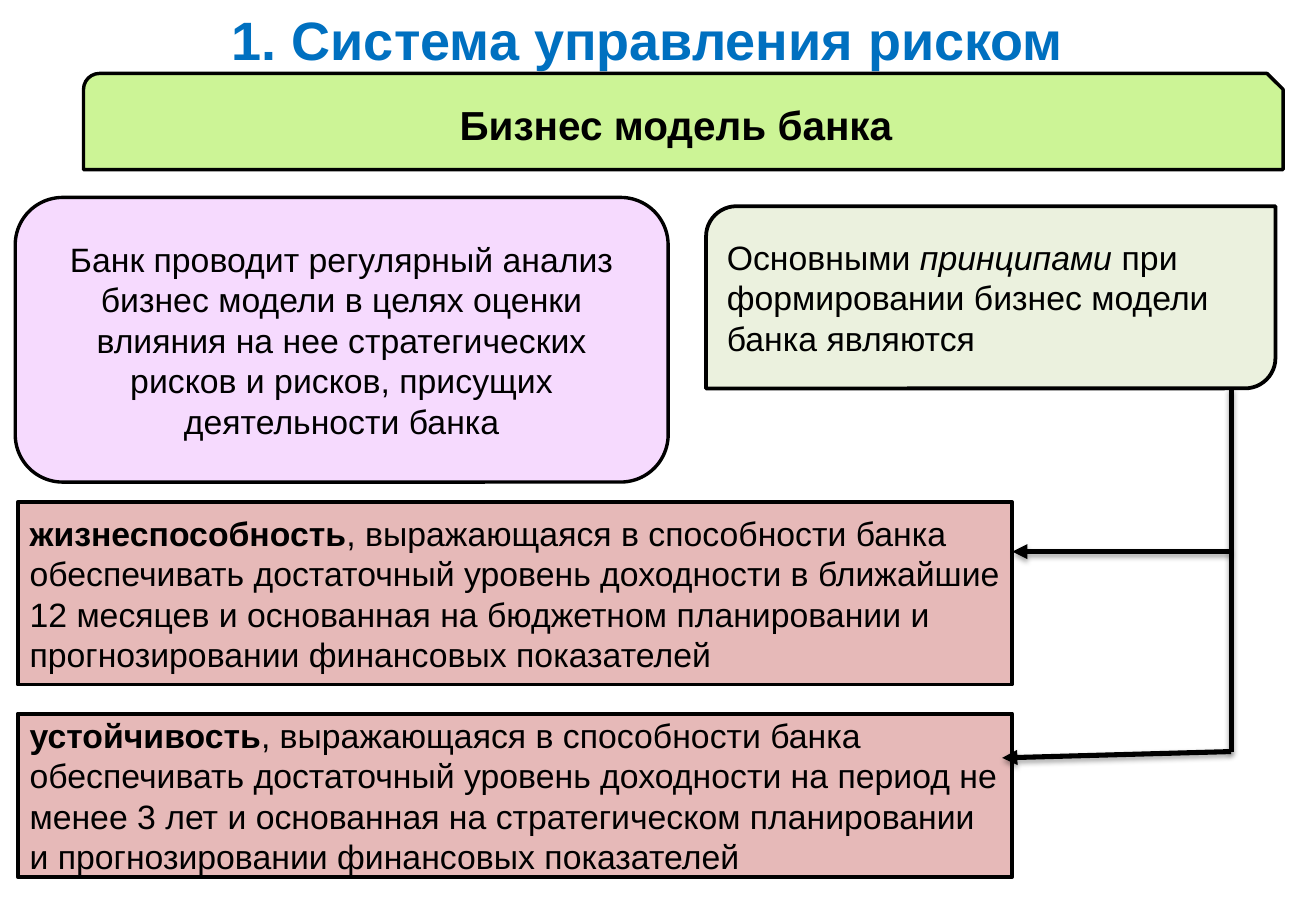
from lxml import etree
from pptx import Presentation, util as u
from pptx.dml.color import RGBColor
from pptx.enum import shapes as sh, text as tx
from pptx.oxml import parse_xml
from pptx.oxml.ns import nsdecls, qn

BLACK = RGBColor(0x00, 0x00, 0x00)
BLUE = RGBColor(0x00, 0x70, 0xC0)
LIME = RGBColor(0xCC, 0xF4, 0x96)
LILAC = RGBColor(0xF6, 0xDA, 0xFE)
SAGE = RGBColor(0xEB, 0xF1, 0xDE)
ROSE = RGBColor(0xE6, 0xB9, 0xB8)

FONT = "Arial"
PX = 9525
KIND = sh.MSO_SHAPE
MID, LEFT = tx.PP_ALIGN.CENTER, tx.PP_ALIGN.LEFT

# Content: runs are (text, style), style is "", "b" or "i"
TITLE = [("1. Система управления риском", "b")]
MODEL = [("Бизнес модель банка ", "b")]
REVIEW = [("Банк проводит регулярный анализ бизнес модели в целях оценки "
           "влияния на нее стратегических рисков и рисков, присущих "
           "деятельности банка", "")]
RULES = [("Основными ", ""), ("принципами ", "i"),
         ("при формировании бизнес модели банка являются", "")]
VIABLE = [("жизнеспособность", "b"),
          (", выражающаяся в способности банка обеспечивать достаточный "
           "уровень доходности в ближайшие 12 месяцев и основанная на "
           "бюджетном планировании и прогнозировании финансовых показателей", "")]
STABLE = [("устойчивость", "b"),
          (", выражающаяся в способности банка обеспечивать достаточный "
           "уровень доходности на период не менее 3 лет и основанная на "
           "стратегическом планировании и прогнозировании финансовых "
           "показателей", "")]

# kind, (left, top, width, height), fill, line pt, text pt, align, runs
BOXES = [
    (KIND.SNIP_ROUND_RECTANGLE, (66, 58, 948, 76), LIME, 2, 24, MID, MODEL),
    (KIND.ROUNDED_RECTANGLE, (12, 156, 516, 225), LILAC, 2, 20, MID, REVIEW),
    (KIND.ROUND_2_DIAG_RECTANGLE, (558, 163, 450, 144), SAGE, 2.25, 20, LEFT, RULES),
    (KIND.RECTANGLE, (14, 397, 786, 144), ROSE, 2.25, 20, LEFT, VIABLE),
    (KIND.RECTANGLE, (14, 564, 786, 129), ROSE, 2.25, 20, LEFT, STABLE),
]

# Trunk from the principles box, with an arrow to each principle
TRUNK = 973
LINES = [
    ((TRUNK, 307), (TRUNK, 594), False),
    ((TRUNK, 436), (800, 436), True),
    ((TRUNK, 594), (792, 599), True),
]
SHADOW = (f'<a:effectLst {nsdecls("a")}>'
          f'<a:outerShdw blurRad="{u.Pt(3)}" dist="{u.Pt(1.8)}" dir="5400000" '
          'rotWithShape="0"><a:srgbClr val="000000"><a:alpha val="35000"/>'
          '</a:srgbClr></a:outerShdw></a:effectLst>')


def px(vals):
    return [v * PX for v in vals]


def write(frame, runs, size, color, align, anchor):
    frame.word_wrap = True
    frame.auto_size = tx.MSO_AUTO_SIZE.NONE
    frame.vertical_anchor = anchor
    para = frame.paragraphs[0]
    para.alignment = align
    for words, style in runs:
        run = para.add_run()
        run.text = words
        font = run.font
        font.name, font.size = FONT, u.Pt(size)
        font.bold, font.italic = style == "b", style == "i"
        font.color.rgb = color


def add_box(slide, kind, place, fill, line, size, align, runs):
    box = slide.shapes.add_shape(kind, *px(place))
    box.shadow.inherit = False
    box.fill.solid()
    box.fill.fore_color.rgb = fill
    box.line.color.rgb = BLACK
    box.line.width = u.Pt(line)
    write(box.text_frame, runs, size, BLACK, align, tx.MSO_ANCHOR.MIDDLE)


def add_line(slide, start, end, arrow):
    link = slide.shapes.add_connector(sh.MSO_CONNECTOR.STRAIGHT, *px(start + end))
    link.line.color.rgb = BLACK
    link.line.width = u.Pt(3)
    if arrow:
        etree.SubElement(link.line._get_or_add_ln(), qn("a:tailEnd"), type="triangle")
    link._element.spPr.append(parse_xml(SHADOW))


def main():
    deck = Presentation()
    deck.slide_width, deck.slide_height = px((1040, 720))
    slide = deck.slides.add_slide(deck.slide_layouts[5])

    # Title
    title = slide.shapes.title
    title.left, title.top, title.width, title.height = px((36, 0, 952, 58))
    write(title.text_frame, TITLE, 32, BLUE, MID, tx.MSO_ANCHOR.TOP)

    # Boxes, then lines
    for box in BOXES:
        add_box(slide, *box)
    for line in LINES:
        add_line(slide, *line)

    deck.save("out.pptx")


if __name__ == "__main__":
    main()
